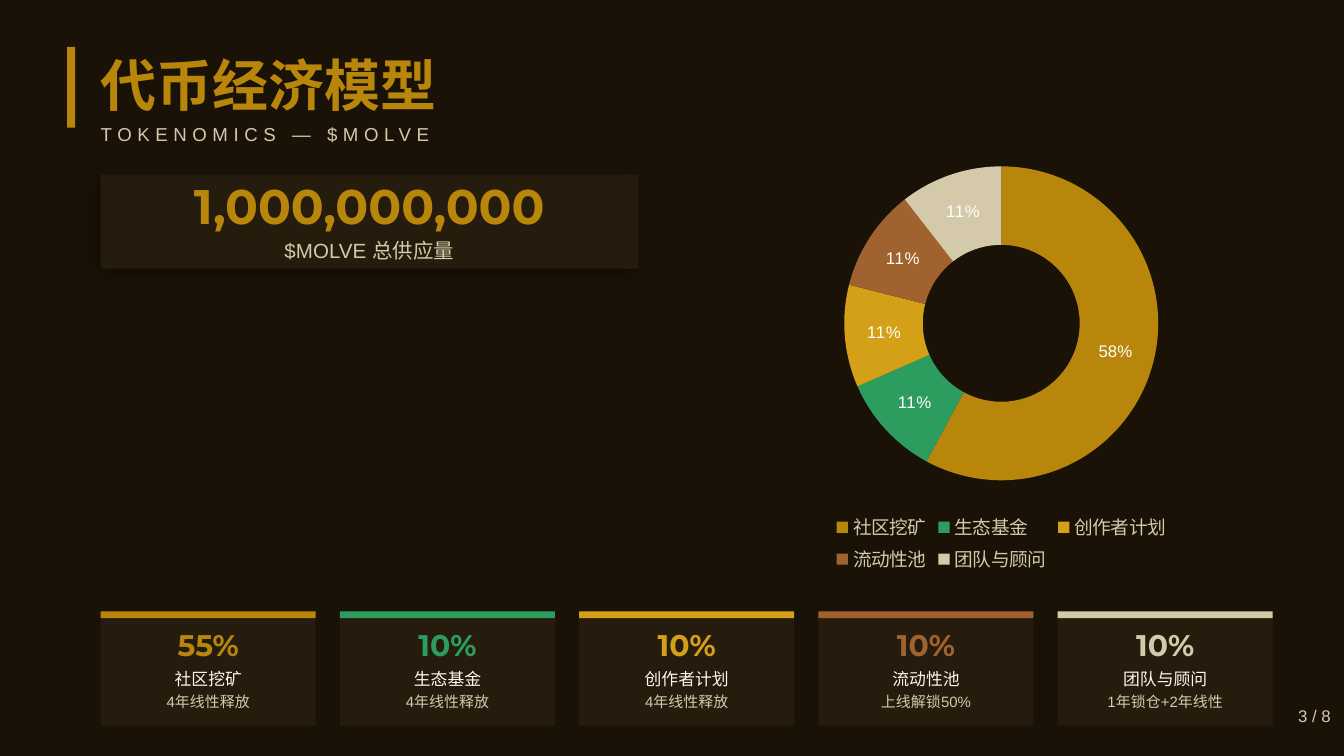
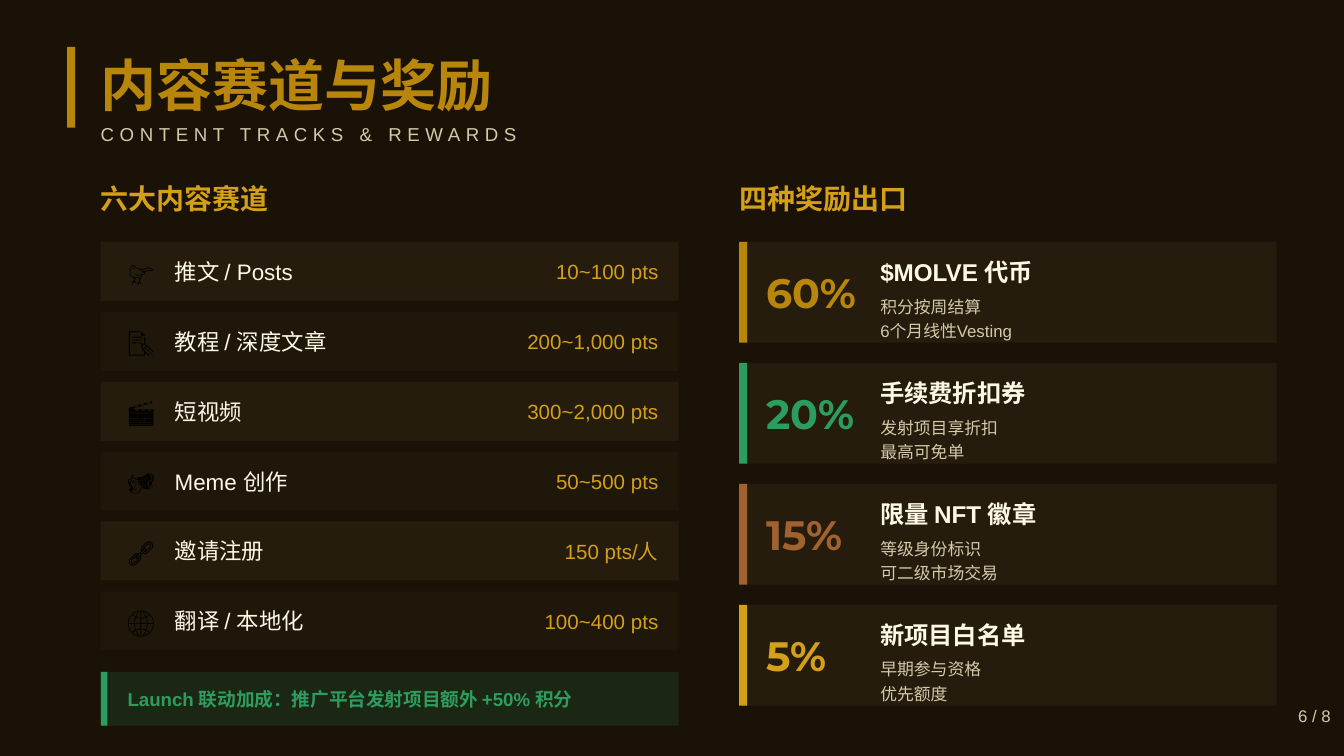
from lxml import etree
from pptx import Presentation
from pptx import util as u
from pptx.chart import data as chart_data
from pptx.dml import color
from pptx.enum import chart as chart_enum
from pptx.enum import shapes, text
from pptx.oxml import ns

COLORS = {
    "night": "1A1207",
    "panel": "251C0E",
    "gold": "B8860B",
    "amber": "D4A017",
    "green": "2D9D5F",
    "copper": "A0622E",
    "sand": "D4C9A8",
    "cream": "FFF8E7",
    "black": "000000",
    "white": "FFFFFF",
}
RGB = {name: color.RGBColor.from_string(value) for name, value in COLORS.items()}
LEFT, CENTER, RIGHT = text.PP_ALIGN.LEFT, text.PP_ALIGN.CENTER, text.PP_ALIGN.RIGHT

STYLES = {
    "title": {"size": u.Pt(30), "name": "Montserrat", "bold": True},
    "subtitle": {"size": u.Pt(10), "name": "Arial"},
    "heading": {"size": u.Pt(15), "name": "Montserrat", "bold": True},
    "supply": {"size": u.Pt(26), "name": "Montserrat", "bold": True},
    "share": {"size": u.Pt(22), "name": "Montserrat", "bold": True},
    "card_share": {"size": u.Pt(16), "name": "Montserrat", "bold": True},
    "reward": {"size": u.Pt(13), "name": "Arial", "bold": True},
    "track": {"size": u.Pt(12), "name": "Arial"},
    "points": {"size": u.Pt(11), "name": "Arial"},
    "bonus": {"size": u.Pt(10), "name": "Arial", "bold": True},
    "label": {"size": u.Pt(9), "name": "Arial"},
    "note": {"size": u.Pt(8), "name": "Arial"},
    "icon": {"size": u.Pt(14), "name": "Calibri"},
    "legend": {"size": u.Pt(10), "name": "Calibri"},
}


def add_bar(slide, left, top, width, height, fill, opacity=100):
    shape = slide.shapes.add_shape(
        shapes.MSO_SHAPE.RECTANGLE,
        u.Inches(left), u.Inches(top), u.Inches(width), u.Inches(height),
    )
    shape.shadow.inherit = False
    shape.fill.solid()
    shape.fill.fore_color.rgb = RGB[fill]
    shape.line.fill.background()
    if opacity < 100:
        fill_color = shape.element.spPr.xpath("./a:solidFill/a:srgbClr")[0]
        etree.SubElement(fill_color, ns.qn("a:alpha"), val=str(opacity * 1000))
    return shape


def add_text(slide, left, top, width, height, words, style, ink,
             align=LEFT, inset=0, line_spacing=None):
    box = slide.shapes.add_textbox(
        u.Inches(left), u.Inches(top), u.Inches(width), u.Inches(height)
    )
    frame = box.text_frame
    frame.word_wrap = True
    frame.vertical_anchor = text.MSO_ANCHOR.MIDDLE
    for side in ("left", "top", "right", "bottom"):
        setattr(frame, f"margin_{side}", u.Inches(inset))
    frame.text = words
    for paragraph in frame.paragraphs:
        paragraph.alignment = align
        paragraph.line_spacing = line_spacing
        for run in paragraph.runs:
            for attribute, value in STYLES[style].items():
                setattr(run.font, attribute, value)
            run.font.color.rgb = RGB[ink]
    return box


presentation = Presentation()
presentation.slide_width = u.Inches(10)
presentation.slide_height = u.Inches(10 * 9 / 16)

slides = []
for title, subtitle in [
    ("代币经济模型", "TOKENOMICS — $MOLVE"),
    ("内容赛道与奖励", "CONTENT TRACKS & REWARDS"),
]:
    slide = presentation.slides.add_slide(presentation.slide_layouts[6])
    slide.background.fill.solid()
    slide.background.fill.fore_color.rgb = RGB["night"]
    add_bar(slide, 0.5, 0.35, 0.06, 0.6, "gold")
    add_text(slide, 0.75, 0.3, 5, 0.65, title, "title", "gold")
    subtitle_box = add_text(slide, 0.75, 0.85, 5, 0.3, subtitle, "subtitle", "sand")
    subtitle_run = subtitle_box.text_frame.paragraphs[0].runs[0]
    subtitle_run.font._element.set("spc", "300")
    slides.append(slide)
token_slide, reward_slide = slides

supply_panel = add_bar(token_slide, 0.75, 1.3, 4, 0.7, "panel")
shadow = etree.SubElement(
    supply_panel.element.spPr.find(ns.qn("a:effectLst")), ns.qn("a:outerShdw"),
    blurRad=str(u.Pt(8)), dist=str(u.Pt(3)), dir=str(135 * 60000),
    algn="bl", rotWithShape="0",
)
shadow_color = etree.SubElement(shadow, ns.qn("a:srgbClr"), val=COLORS["black"])
etree.SubElement(shadow_color, ns.qn("a:alpha"), val="30000")
add_text(token_slide, 0.75, 1.3, 4, 0.45, "1,000,000,000", "supply", "gold", CENTER)
add_text(token_slide, 0.75, 1.72, 4, 0.28, "$MOLVE 总供应量", "points", "sand", CENTER)

allocations = [
    ("社区挖矿", 55, "4年线性释放", "gold"),
    ("生态基金", 10, "4年线性释放", "green"),
    ("创作者计划", 10, "4年线性释放", "amber"),
    ("流动性池", 10, "上线解锁50%", "copper"),
    ("团队与顾问", 10, "1年锁仓+2年线性", "sand"),
]
shares = chart_data.CategoryChartData()
shares.categories = [name for name, share, release, ink in allocations]
shares.add_series("Series 1", [share for name, share, release, ink in allocations])
chart = token_slide.shapes.add_chart(
    chart_enum.XL_CHART_TYPE.DOUGHNUT,
    u.Inches(5.2), u.Inches(1.1), u.Inches(4.5), u.Inches(3.2), shares,
).chart
chart.has_title = False
chart.has_legend = True
chart.legend.position = chart_enum.XL_LEGEND_POSITION.BOTTOM
chart.legend.include_in_layout = False
plot = chart.plots[0]
plot.vary_by_categories = True
plot.has_data_labels = True
labels = plot.data_labels
for attribute, value in {
    "show_percentage": True,
    "show_value": False,
    "show_category_name": False,
    "number_format": "0%",
    "number_format_is_linked": False,
}.items():
    setattr(labels, attribute, value)
for font, style, ink in [
    (chart.font, "legend", "black"),
    (chart.legend.font, "legend", "sand"),
    (labels.font, "label", "white"),
]:
    for attribute, value in STYLES[style].items():
        setattr(font, attribute, value)
    font.color.rgb = RGB[ink]

for index, (name, share, release, ink) in enumerate(allocations):
    point = plot.series[0].points[index]
    point.format.fill.solid()
    point.format.fill.fore_color.rgb = RGB[ink]
    point.format.line.fill.background()
    left = 0.75 + index * 1.78
    add_bar(token_slide, left, 4.55, 1.6, 0.85, "panel")
    add_bar(token_slide, left, 4.55, 1.6, 0.05, ink)
    add_text(token_slide, left, 4.62, 1.6, 0.35, f"{share}%", "card_share", ink, CENTER)
    add_text(token_slide, left, 4.95, 1.6, 0.2, name, "label", "cream", CENTER)
    add_text(token_slide, left, 5.12, 1.6, 0.2, release, "note", "sand", CENTER)

add_text(reward_slide, 0.75, 1.3, 4.3, 0.35, "六大内容赛道", "heading", "amber")
for index, (icon, track, points) in enumerate([
    ("🐦", "推文 / Posts", "10~100 pts"),
    ("📝", "教程 / 深度文章", "200~1,000 pts"),
    ("🎬", "短视频", "300~2,000 pts"),
    ("🎭", "Meme 创作", "50~500 pts"),
    ("🔗", "邀请注册", "150 pts/人"),
    ("🌐", "翻译 / 本地化", "100~400 pts"),
]):
    top = 1.8 + index * 0.52
    add_bar(reward_slide, 0.75, top, 4.3, 0.44, "panel", 50 if index % 2 else 100)
    add_text(reward_slide, 0.85, top, 0.4, 0.44, icon, "icon", "black", CENTER)
    add_text(reward_slide, 1.3, top, 2.2, 0.44, track, "track", "cream")
    add_text(reward_slide, 3.5, top, 1.4, 0.44, points, "points", "amber", RIGHT)

add_bar(reward_slide, 0.75, 5, 4.3, 0.4, "green", 15)
add_bar(reward_slide, 0.75, 5, 0.05, 0.4, "green")
add_text(reward_slide, 0.95, 5, 3.9, 0.4,
         "Launch 联动加成：推广平台发射项目额外 +50% 积分", "bonus", "green")

add_text(reward_slide, 5.5, 1.3, 4, 0.35, "四种奖励出口", "heading", "amber")
for index, (share, reward, details, ink) in enumerate([
    ("60%", "$MOLVE 代币", "积分按周结算\n6个月线性Vesting", "gold"),
    ("20%", "手续费折扣券", "发射项目享折扣\n最高可免单", "green"),
    ("15%", "限量 NFT 徽章", "等级身份标识\n可二级市场交易", "copper"),
    ("5%", "新项目白名单", "早期参与资格\n优先额度", "amber"),
]):
    top = 1.8 + index * 0.9
    add_bar(reward_slide, 5.5, top, 4, 0.75, "panel")
    add_bar(reward_slide, 5.5, top, 0.06, 0.75, ink)
    add_text(reward_slide, 5.7, top, 0.8, 0.75, share, "share", ink)
    add_text(reward_slide, 6.55, top + 0.05, 2.8, 0.35, reward, "reward", "cream")
    add_text(reward_slide, 6.55, top + 0.38, 2.8, 0.35, details, "label", "sand",
             line_spacing=1.2)

for slide, page in [(token_slide, "3 / 8"), (reward_slide, "6 / 8")]:
    add_text(slide, 8.8, 5.15, 1.2, 0.35, page, "label", "sand", RIGHT, 0.1)

presentation.save("out.pptx")
